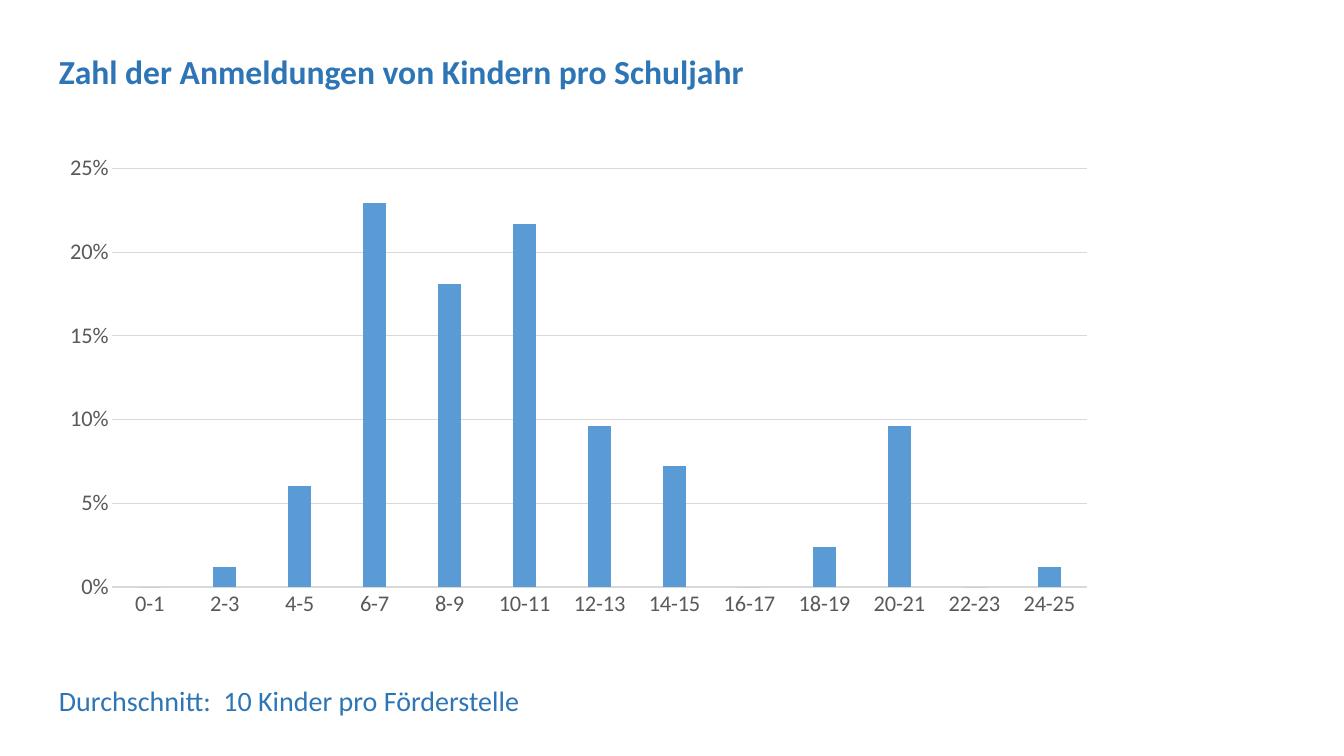
"""Build the slide on yearly registrations of children."""
from pptx import Presentation
from pptx.chart.data import CategoryChartData
from pptx.dml.color import RGBColor
from pptx.enum.chart import XL_CHART_TYPE as ChartType, XL_TICK_MARK as Tick
from pptx.enum.text import MSO_AUTO_SIZE as AutoSize
from pptx.util import Emu, Pt

TITLE = "Zahl der Anmeldungen von Kindern pro Schuljahr"
AVERAGE = "Durchschnitt:  10 Kinder pro Förderstelle"
SHARES = {
    "0-1": 0, "2-3": 0.012, "4-5": 0.06, "6-7": 0.229, "8-9": 0.181,
    "10-11": 0.217, "12-13": 0.096, "14-15": 0.072, "16-17": 0,
    "18-19": 0.024, "20-21": 0.096, "22-23": 0, "24-25": 0.012,
}
FONT = "Calibri"
HEADING, BAR, LABEL, GRID = "2E75B6", "5B9BD5", "595959", "D9D9D9"
LEFT, TEXT_WIDTH = 49, 1190


def px(length):
    return Emu(length * 9071)


def color(value):
    return RGBColor.from_string(value)


def style(font, size, shade, bold=False):
    font.name, font.size, font.bold = FONT, Pt(size), bold
    font.color.rgb = color(shade)


def rule(line):
    line.color.rgb = color(GRID)
    line.width = Pt(0.75)


def add_text(slide, text, top, height, size, bold=False):
    frame = slide.shapes.add_textbox(
        px(LEFT), px(top), px(TEXT_WIDTH), px(height)).text_frame
    frame.word_wrap = True
    frame.auto_size = AutoSize.SHAPE_TO_FIT_TEXT
    frame.text = text
    style(frame.paragraphs[0].runs[0].font, size, HEADING, bold)


def add_shares(slide):
    data = CategoryChartData(number_format="0%")
    data.categories = list(SHARES)
    data.add_series("Series 1", list(SHARES.values()))
    chart = slide.shapes.add_chart(
        ChartType.COLUMN_CLUSTERED, px(LEFT), px(145), px(1059), px(483),
        data).chart
    chart.has_legend = chart.has_title = False
    style(chart.font, 10, "000000")

    bars = chart.plots[0]
    bars.gap_width, bars.overlap, bars.vary_by_categories = 219, -27, False
    fill = bars.series[0].format.fill
    fill.solid()
    fill.fore_color.rgb = color(BAR)

    ranges, percent = chart.category_axis, chart.value_axis
    for axis in (ranges, percent):
        axis.major_tick_mark = axis.minor_tick_mark = Tick.NONE
        style(axis.tick_labels.font, 16, LABEL)
    rule(ranges.format.line)
    percent.format.line.fill.background()
    rule(percent.major_gridlines.format.line)
    percent.minimum_scale, percent.maximum_scale = 0, 0.25
    percent.major_unit = 0.05
    percent.tick_labels.number_format = "0%"
    percent.tick_labels.number_format_is_linked = False


def main():
    deck = Presentation()
    deck.slide_width, deck.slide_height = px(1344), px(756)
    slide = deck.slides.add_slide(deck.slide_layouts[6])
    add_text(slide, TITLE, 46, 50, 24, bold=True)
    add_shares(slide)
    add_text(slide, AVERAGE, 679, 44, 20)
    deck.save("out.pptx")


if __name__ == "__main__":
    main()
